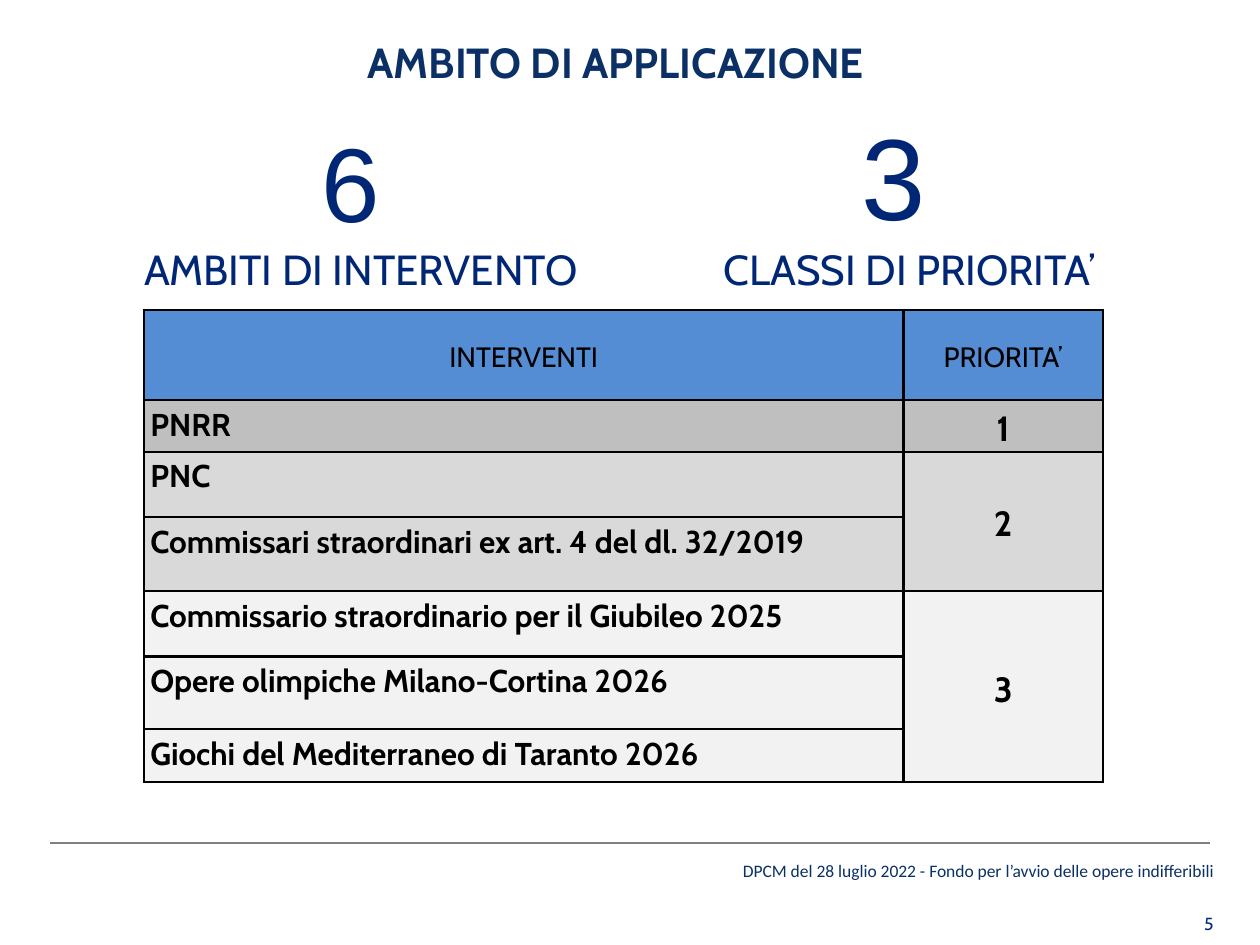
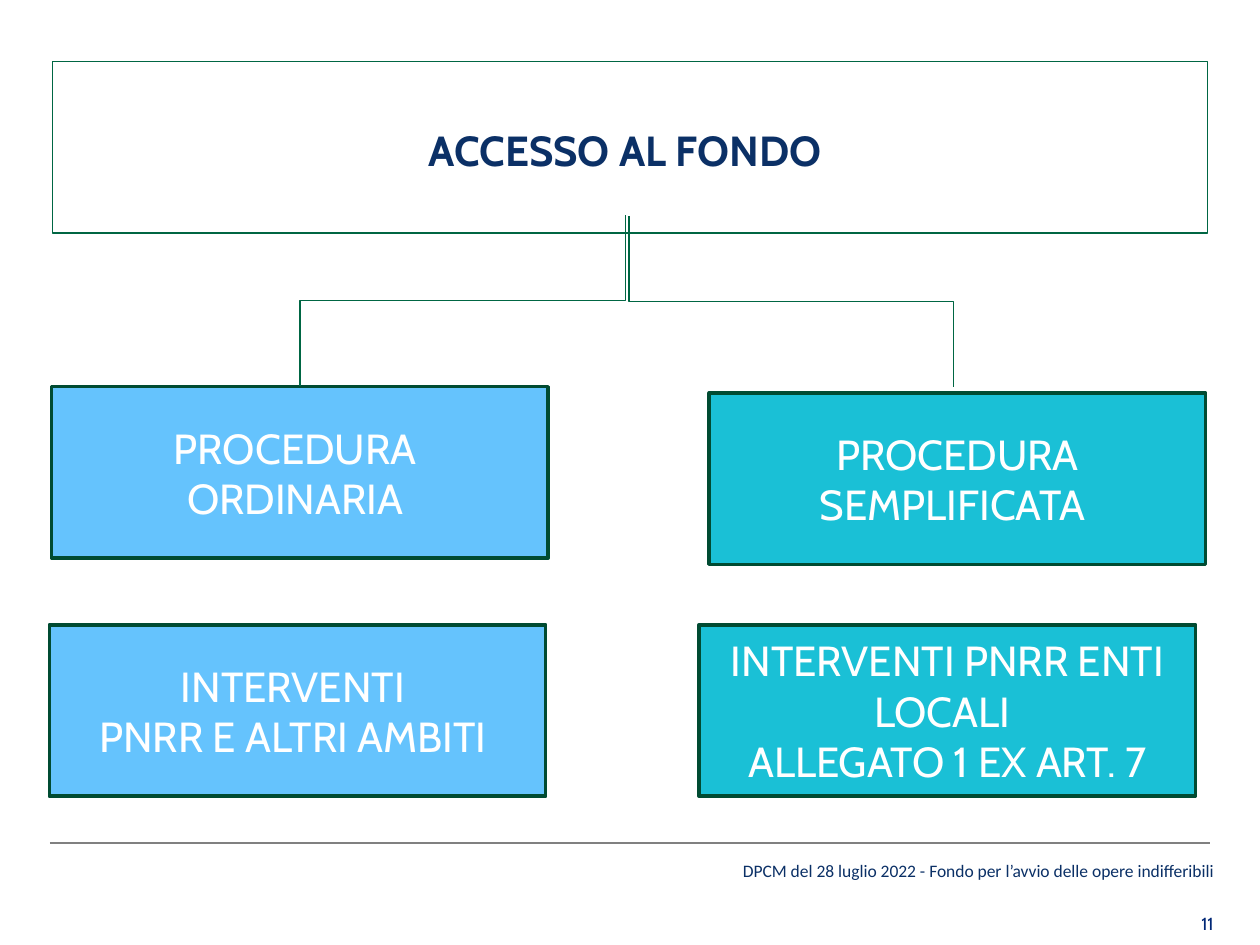
from dataclasses import dataclass
from typing import Optional

from lxml import etree
from pptx import Presentation
from pptx.dml.color import RGBColor
from pptx.enum.shapes import MSO_CONNECTOR as Connector, MSO_SHAPE as Preset
from pptx.enum.text import MSO_ANCHOR as Anchor, PP_ALIGN as Align
from pptx.oxml import parse_xml
from pptx.oxml.ns import nsdecls, qn
from pptx.util import Pt

NAVY, BLUE, BLACK, WHITE = "0B3066", "002776", "000000", "FFFFFF"
SKY, TURQUOISE = "65C3FD", "1AC0D6"
GREEN, DARK_GREEN, RULE_GREY = "006643", "004B32", "808080"
HEADER_BLUE = "548DD4"
FONT = "Cabin"
FOOTER = "DPCM del 28 luglio 2022 - Fondo per l’avvio delle opere indifferibili"
PROCEDURE_SIZE = (283.7, 98)


@dataclass(frozen=True)
class Line:
    text: str
    size: float = 24
    color: str = WHITE
    font: str = FONT
    bold: bool = False
    align: Align = Align.CENTER


@dataclass(frozen=True)
class Box:
    left: float
    top: float
    width: float
    height: float
    lines: tuple[Line, ...]
    anchor: Anchor = Anchor.TOP
    fill: Optional[str] = None
    border: Optional[str] = None
    border_width: float = 0.75
    top_inset: float = 3.6


@dataclass(frozen=True)
class Intervention:
    name: str
    height: float
    shade: str
    align: Align = Align.LEFT


@dataclass(frozen=True)
class Priority:
    label: str
    first_row: int
    last_row: int


def rgb(value: str) -> RGBColor:
    return RGBColor.from_string(value)


def write_lines(frame, lines: tuple[Line, ...]) -> None:
    for index, line in enumerate(lines):
        paragraph = frame.add_paragraph() if index else frame.paragraphs[0]
        paragraph.text = line.text
        paragraph.alignment = line.align
        paragraph.font.name = line.font
        paragraph.font.size = Pt(line.size)
        paragraph.font.bold = line.bold
        paragraph.font.color.rgb = rgb(line.color)


def add_box(slide, box: Box) -> None:
    """Draw a text box, or a rectangle when the box has a border."""
    place = [Pt(v) for v in (box.left, box.top, box.width, box.height)]
    if box.border:
        shape = slide.shapes.add_shape(Preset.RECTANGLE, *place)
        shape.shadow.inherit = False
        shape.line.color.rgb = rgb(box.border)
        shape.line.width = Pt(box.border_width)
        if box.fill:
            shape.fill.solid()
            shape.fill.fore_color.rgb = rgb(box.fill)
        else:
            shape.fill.background()
    else:
        shape = slide.shapes.add_textbox(*place)
    frame = shape.text_frame
    frame.word_wrap = True
    frame.vertical_anchor = box.anchor
    frame.margin_top = Pt(box.top_inset)
    write_lines(frame, box.lines)


def add_line(slide, kind: Connector, start: tuple[float, float],
             end: tuple[float, float], color: str):
    line = slide.shapes.add_connector(kind, *(Pt(v) for v in start + end))
    line.line.color.rgb = rgb(color)
    line.line.width = Pt(0.75)
    etree.SubElement(line._element.spPr, qn("a:effectLst"))
    return line


def add_branch(slide, start: tuple[float, float], end: tuple[float, float]) -> None:
    """Draw an elbow that goes down, sideways and down again."""
    (x1, y1), (x2, y2) = start, end
    mid_x, mid_y = (x1 + x2) / 2, (y1 + y2) / 2
    half_drop, half_run = (y2 - y1) / 2, abs(x2 - x1) / 2
    side = 1 if x2 > x1 else -1
    elbow = add_line(slide, Connector.ELBOW,
                     (mid_x + side * half_drop, mid_y - half_run),
                     (mid_x - side * half_drop, mid_y + half_run), GREEN)
    elbow.rotation = 270 if side > 0 else 90


def add_footer(slide, number: str) -> None:
    add_line(slide, Connector.STRAIGHT, (28.5, 481.75), (691.5, 481.75), RULE_GREY)
    add_box(slide, Box(405.3, 490.3, 295.2, 14.4, (
        Line(FOOTER, 10, NAVY, "Calibri", align=Align.RIGHT),), Anchor.MIDDLE))
    add_box(slide, Box(476.6, 520.5, 224, 14.4, (
        Line(number, 10, BLUE, align=Align.RIGHT),), Anchor.MIDDLE))


def fill_cell(cell, line: Line, shade: str, anchor: Anchor) -> None:
    properties = cell._tc.get_or_add_tcPr()
    for side in "LRTB":
        properties.append(parse_xml(
            f'<a:ln{side} {nsdecls("a")} w="{Pt(1.5)}"><a:solidFill>'
            f'<a:srgbClr val="{BLACK}"/></a:solidFill></a:ln{side}>'))
    cell.fill.solid()
    cell.fill.fore_color.rgb = rgb(shade)
    cell.margin_left = cell.margin_right = Pt(3.6)
    cell.margin_top = cell.margin_bottom = 0
    cell.vertical_anchor = anchor
    write_lines(cell.text_frame, (line,))
    paragraph = cell.text_frame.paragraphs[0]
    paragraph.line_spacing = 1.15
    paragraph.space_after = Pt(10)


def add_priority_table(slide) -> None:
    interventions = (
        Intervention("PNRR", 29.5, "BFBFBF"),
        Intervention("PNC", 37.5, "D9D9D9", Align.JUSTIFY),
        Intervention("Commissari straordinari ex art. 4 del dl. 32/2019",
                     42, "D9D9D9", Align.JUSTIFY),
        Intervention("Commissario straordinario per il Giubileo 2025",
                     37.5, "F2F2F2", Align.JUSTIFY),
        Intervention("Opere olimpiche Milano-Cortina 2026", 41.5, "F2F2F2"),
        Intervention("Giochi del Mediterraneo di Taranto 2026", 30.5, "F2F2F2"),
    )
    priorities = (Priority("1", 1, 1), Priority("2", 2, 3), Priority("3", 4, 6))
    widths = (434, 114)
    heights = (51.5, *(item.height for item in interventions))
    table = slide.shapes.add_table(
        len(heights), len(widths), Pt(82.3), Pt(177.2),
        Pt(sum(widths)), Pt(sum(heights))).table
    table.first_row = table.horz_banding = False
    for column, width in zip(table.columns, widths):
        column.width = Pt(width)
    for row, height in zip(table.rows, heights):
        row.height = Pt(height)

    for column, heading in enumerate(("INTERVENTI", "PRIORITA’")):
        fill_cell(table.cell(0, column), Line(heading, 16, BLACK),
                  HEADER_BLUE, Anchor.MIDDLE)
    labels = {item.first_row: item.label for item in priorities}
    for row, item in enumerate(interventions, start=1):
        fill_cell(table.cell(row, 0),
                  Line(item.name, 18, BLACK, bold=True, align=item.align),
                  item.shade, Anchor.TOP)
        fill_cell(table.cell(row, 1),
                  Line(labels.get(row, ""), 20, BLACK, bold=True),
                  item.shade, Anchor.MIDDLE)
    for item in priorities:
        if item.last_row > item.first_row:
            table.cell(item.first_row, 1).merge(table.cell(item.last_row, 1))


def build_scope(slide) -> None:
    add_footer(slide, "5")
    add_box(slide, Box(19.4, 17.3, 670.3, 41.8, (
        Line("AMBITO DI APPLICAZIONE ", color=NAVY, bold=True),)))
    add_priority_table(slide)
    add_box(slide, Box(52.6, 63.4, 312.5, 108.7, (
        Line("6 ", 60, BLUE, "Arial"),
        Line("AMBITI DI INTERVENTO ", color=BLUE))))
    add_box(slide, Box(372.2, 56.2, 295.2, 116.6, (
        Line("3 ", 66, BLUE, "Arial"),
        Line("CLASSI DI PRIORITA’", color=BLUE))))


def build_access(slide) -> None:
    add_footer(slide, "11")
    add_box(slide, Box(29.9, 35.2, 660, 98, (
        Line("ACCESSO AL FONDO ", color=NAVY, bold=True),),
        border=GREEN, top_inset=36))
    procedures = (
        (29.5, 221, SKY, ("PROCEDURA ", "ORDINARIA ")),
        (28.2, 357, SKY, ("INTERVENTI ", "PNRR E ALTRI AMBITI ")),
        (405.3, 224.5, TURQUOISE, ("PROCEDURA SEMPLIFICATA ",)),
        (399.5, 357, TURQUOISE,
         ("INTERVENTI PNRR ENTI LOCALI ", "ALLEGATO 1 EX ART. 7")),
    )
    for left, top, fill, texts in procedures:
        add_box(slide, Box(left, top, *PROCEDURE_SIZE,
                           tuple(Line(text) for text in texts),
                           Anchor.MIDDLE, fill, DARK_GREEN, 2))
    add_branch(slide, (359.5, 123.5), (545, 221))
    add_branch(slide, (357.3, 123), (171.5, 220.5))


def main() -> None:
    deck = Presentation()
    deck.slide_width, deck.slide_height = Pt(720), Pt(540)
    blank = deck.slide_layouts[6]
    for build in (build_scope, build_access):
        build(deck.slides.add_slide(blank))
    deck.save("out.pptx")


if __name__ == "__main__":
    main()
